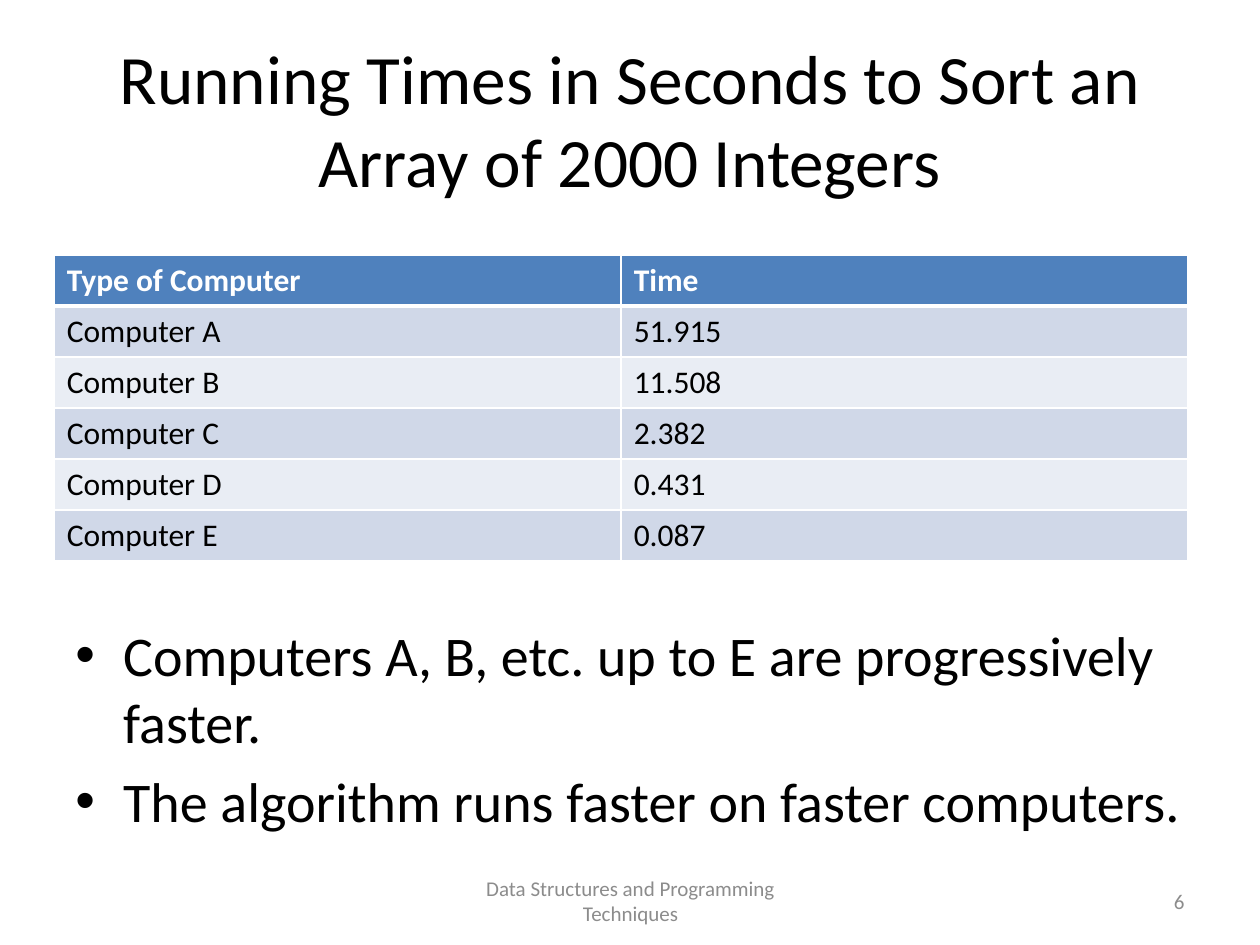
from lxml import etree
from pptx import Presentation
from pptx.dml.color import RGBColor
from pptx.enum.text import MSO_ANCHOR, PP_ALIGN
from pptx.oxml.ns import qn
from pptx.util import Inches, Pt

LEFT, CENTER, RIGHT = PP_ALIGN.LEFT, PP_ALIGN.CENTER, PP_ALIGN.RIGHT
TOP, MIDDLE = MSO_ANCHOR.TOP, MSO_ANCHOR.MIDDLE

FONT = "Calibri"
WIDE, HIGH = 10, 7.5
COLORS = {
    "paper": "FFFFFF",
    "ink": "000000",
    "head": "4F81BD",
    "odd": "D0D8E8",
    "even": "E9EDF4",
    "muted": "8C8C8C",
}
TIMES = [
    ("Type of Computer", "Time"),
    ("Computer A", "51.915"),
    ("Computer B", "11.508"),
    ("Computer C", "2.382"),
    ("Computer D", "0.431"),
    ("Computer E", "0.087"),
]
POINTS = [
    "Computers A, B, etc. up to E are progressively faster.",
    "The algorithm runs faster on faster computers.",
]


def rgb(name):
    return RGBColor.from_string(COLORS[name])


def area(x, y, w, h):
    """Turn shares of the slide's size into lengths."""
    return Inches(x * WIDE), Inches(y * HIGH), Inches(w * WIDE), Inches(h * HIGH)


def write(para, text, size, color="ink", bold=False):
    run = para.add_run()
    run.text = text
    font = run.font
    font.name, font.size, font.bold = FONT, Pt(size), bold
    font.color.rgb = rgb(color)


def add_text(slide, box, lines, size, color="ink", align=LEFT, anchor=MIDDLE):
    """Add a text box with one paragraph a line and return its paragraphs."""
    frame = slide.shapes.add_textbox(*box).text_frame
    frame.word_wrap = True
    frame.vertical_anchor = anchor
    for i, line in enumerate(lines):
        para = frame.add_paragraph() if i else frame.paragraphs[0]
        para.alignment = align
        write(para, line, size, color)
    return frame.paragraphs


def add_title(slide, box):
    title = "Running Times in Seconds to Sort an Array of 2000 Integers"
    add_text(slide, box, [title], 39.6, align=CENTER)


def add_edge(cell, side, width):
    line = etree.SubElement(cell._tc.get_or_add_tcPr(), qn("a:ln" + side), w=str(Pt(width)))
    fill = etree.SubElement(line, qn("a:solidFill"))
    etree.SubElement(fill, qn("a:srgbClr"), val=COLORS["paper"])


def add_times(slide, box):
    table = slide.shapes.add_table(len(TIMES), len(TIMES[0]), *box).table
    for r, row in enumerate(TIMES):
        shade = "head" if r == 0 else "odd" if r % 2 else "even"
        for c, text in enumerate(row):
            cell = table.cell(r, c)
            for side in "LRTB":
                heavy = (r, side) in ((0, "B"), (1, "T"))
                add_edge(cell, side, 3 if heavy else 1)
            cell.fill.solid()
            cell.fill.fore_color.rgb = rgb(shade)
            color = "ink" if r else "paper"
            write(cell.text_frame.paragraphs[0], text, 18, color, r == 0)


def add_points(slide, box):
    for i, para in enumerate(add_text(slide, box, POINTS, 32, anchor=TOP)):
        para.space_before = Pt(6.4 if i else 0)
        props = para._p.get_or_add_pPr()
        props.set("marL", str(Inches(0.38)))
        props.set("indent", str(Inches(-0.38)))
        etree.SubElement(props, qn("a:buFont"), typeface="Arial")
        etree.SubElement(props, qn("a:buChar"), char="•")


def add_footer(slide, box, text, align):
    add_text(slide, box, [text], 12, "muted", align)


def main():
    deck = Presentation()
    deck.slide_width, deck.slide_height = Inches(WIDE), Inches(HIGH)
    slide = deck.slides.add_slide(deck.slide_layouts[6])
    add_title(slide, area(0.05, 0.04, 0.9, 0.17))
    add_times(slide, area(0.043, 0.27, 0.9, 0.324))
    add_points(slide, area(0.05, 0.65, 0.9, 0.24))
    course = "Data Structures and Programming Techniques"
    add_footer(slide, area(0.342, 0.927, 0.317, 0.053), course, CENTER)
    add_footer(slide, area(0.717, 0.927, 0.233, 0.053), "6", RIGHT)
    deck.save("out.pptx")


if __name__ == "__main__":
    main()
